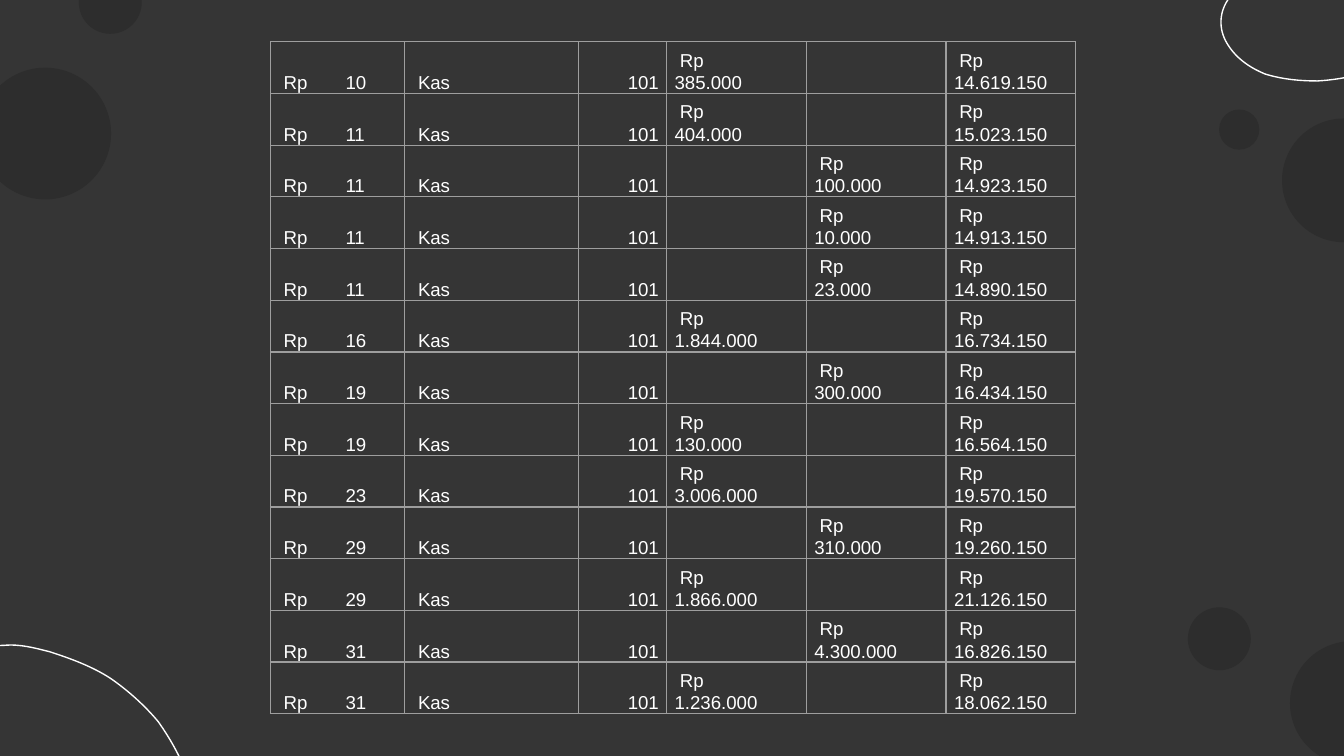
from dataclasses import dataclass
from itertools import product

from lxml.etree import SubElement
from pptx import Presentation
from pptx.dml.color import RGBColor
from pptx.enum.shapes import MSO_SHAPE
from pptx.enum.text import MSO_ANCHOR, PP_ALIGN
from pptx.oxml.ns import qn
from pptx.util import Cm, Pt


@dataclass(frozen=True)
class Theme:
    background: RGBColor = RGBColor.from_string("353535")
    circle: RGBColor = RGBColor.from_string("2D2D2D")
    text: RGBColor = RGBColor.from_string("FFFFFF")
    outline: RGBColor = RGBColor.from_string("FFFFFF")
    border: str = "9E9E9E"
    line_width: Pt = Pt(0.75)
    font: str = "Arial"
    text_size: Pt = Pt(10)


THEME = Theme()

# Left, top and diameter of each background circle, in cm
CIRCLES = [
    (24.38, 12.12, 2.34), (22.45, 11.48, 1.19), (24.23, 2.24, 2.34),
    (23.04, 2.07, 0.76), (-0.39, 1.28, 2.49), (1.49, -0.55, 1.19),
]

# Bezier segments of the blob, in cm from its start: two controls and an end
BLOB = [
    ((-0.43, -0.48), (-0.99, -0.84), (-1.3, -1.4)),
    ((-1.55, -1.8), (-1.47, -2.21), (-1.14, -2.54)),
    ((-0.94, -2.74), (-0.71, -2.79), (-0.46, -2.79)),
    ((-0.15, -2.82), (0.13, -2.74), (0.41, -2.67)),
    ((0.81, -2.54), (1.22, -2.39), (1.57, -2.16)),
    ((1.9, -1.93), (2.21, -1.65), (2.46, -1.35)),
    ((2.95, -0.66), (3.23, 0.08), (3.28, 0.91)),
    ((3.28, 1.24), (3.25, 1.57), (3.15, 1.9)),
    ((3.02, 2.21), (2.84, 2.46), (2.57, 2.62)),
    ((2.29, 2.79), (1.96, 2.77), (1.7, 2.57)),
    ((1.45, 2.34), (1.24, 2.08), (1.09, 1.78)),
    ((0.81, 1.27), (0.51, 0.64), (0.13, 0.15)),
    ((0.1, 0.1), (0.05, 0.05), (0, 0)),
]

# Ledger: day, debit, credit, balance
ENTRIES = [
    ("10", "385.000", "", "14.619.150"),
    ("11", "404.000", "", "15.023.150"),
    ("11", "", "100.000", "14.923.150"),
    ("11", "", "10.000", "14.913.150"),
    ("11", "", "23.000", "14.890.150"),
    ("16", "1.844.000", "", "16.734.150"),
    ("19", "", "300.000", "16.434.150"),
    ("19", "130.000", "", "16.564.150"),
    ("23", "3.006.000", "", "19.570.150"),
    ("29", "", "310.000", "19.260.150"),
    ("29", "1.866.000", "", "21.126.150"),
    ("31", "", "4.300.000", "16.826.150"),
    ("31", "1.236.000", "", "18.062.150"),
]
COLUMN_WIDTHS = [2.54, 3.28, 1.67, 2.64, 2.64, 2.44]
CELL_INSET = 0.15
AMOUNT_INSET = 0.84  # narrows debit and credit so the figure wraps below "Rp"


def add_circle(slide, left, top, diameter):
    circle = slide.shapes.add_shape(
        MSO_SHAPE.OVAL, Cm(left), Cm(top), Cm(diameter), Cm(diameter))
    circle.shadow.inherit = False
    circle.fill.solid()
    circle.fill.fore_color.rgb = THEME.circle
    circle.line.fill.background()


def add_blob(slide, left, top, quarter_turn=False):
    def place(point):
        x, y = (-point[1], point[0]) if quarter_turn else point
        return Cm(left + x), Cm(top + y)

    segments = [[place(point) for point in segment] for segment in BLOB]
    builder = slide.shapes.build_freeform(Cm(left), Cm(top))
    builder.add_line_segments([segment[-1] for segment in segments], close=True)
    blob = builder.convert_to_shape()

    # Turn each straight segment into a Bezier curve
    for line, segment in zip(list(blob._element.iter(qn("a:lnTo"))), segments):
        curve = line.makeelement(qn("a:cubicBezTo"))
        for x, y in segment:
            SubElement(curve, qn("a:pt"), x=str(x - blob.left), y=str(y - blob.top))
        line.getparent().replace(line, curve)

    blob.shadow.inherit = False
    blob.fill.background()
    blob.line.color.rgb = THEME.outline
    blob.line.width = THEME.line_width


def add_borders(cell):
    properties = cell._tc.get_or_add_tcPr()
    for side in ("a:lnL", "a:lnR", "a:lnT", "a:lnB"):
        line = SubElement(properties, qn(side), w=str(int(THEME.line_width)))
        fill = SubElement(line, qn("a:solidFill"))
        SubElement(fill, qn("a:srgbClr"), val=THEME.border)


def write_text(cell, text, align=PP_ALIGN.LEFT, first_indent=0.0, tab=None):
    paragraph = cell.text_frame.paragraphs[0]
    properties = paragraph._p.get_or_add_pPr()
    properties.set("marL", "0")
    properties.set("indent", str(int(Cm(first_indent))))
    if tab:
        tabs = SubElement(properties, qn("a:tabLst"))
        SubElement(tabs, qn("a:tab"), pos=str(int(Cm(tab))), algn="l")
    paragraph.alignment = align
    paragraph.line_spacing = 1.07
    paragraph.space_after = Pt(8)
    run = paragraph.add_run()
    run.text = text
    run.font.name = THEME.font
    run.font.size = THEME.text_size
    run.font.color.rgb = THEME.text


def add_ledger(slide, left, top, height):
    rows, columns = len(ENTRIES), len(COLUMN_WIDTHS)
    table = slide.shapes.add_table(
        rows, columns, Cm(left), Cm(top), Cm(sum(COLUMN_WIDTHS)), Cm(height)).table
    table.first_row = False
    table.horz_banding = False
    for column, width in zip(table.columns, COLUMN_WIDTHS):
        column.width = Cm(width)
    for row in table.rows:
        row.height = Cm(height / rows)

    # Cell frames
    for row, column in product(range(rows), range(columns)):
        cell = table.cell(row, column)
        cell.vertical_anchor = MSO_ANCHOR.BOTTOM
        cell.margin_left = Cm(CELL_INSET)
        cell.margin_right = Cm(AMOUNT_INSET if column in (3, 4) else CELL_INSET)
        cell.margin_top = cell.margin_bottom = 0
        add_borders(cell)
        cell.fill.background()

    # Cell text
    for row, (day, *amounts) in enumerate(ENTRIES):
        write_text(table.cell(row, 0), f"Rp\t{day}", first_indent=0.1, tab=1.82)
        write_text(table.cell(row, 1), "Kas", first_indent=0.1)
        write_text(table.cell(row, 2), "101", align=PP_ALIGN.RIGHT)
        for column, amount in enumerate(amounts, start=3):
            if amount:
                write_text(table.cell(row, column), f"Rp {amount}", first_indent=0.1)


def add_background(slide):
    slide.background.fill.solid()
    slide.background.fill.fore_color.rgb = THEME.background
    add_blob(slide, 0.53, 14.99)
    add_blob(slide, 25.81, -1.75, quarter_turn=True)
    for circle in CIRCLES:
        add_circle(slide, *circle)


def main():
    presentation = Presentation()
    presentation.slide_width = Cm(25.4)
    presentation.slide_height = Cm(14.29)
    slide = presentation.slides.add_slide(presentation.slide_layouts[6])
    add_background(slide)
    add_ledger(slide, left=5.11, top=0.79, height=12.71)
    presentation.save("out.pptx")


if __name__ == "__main__":
    main()
